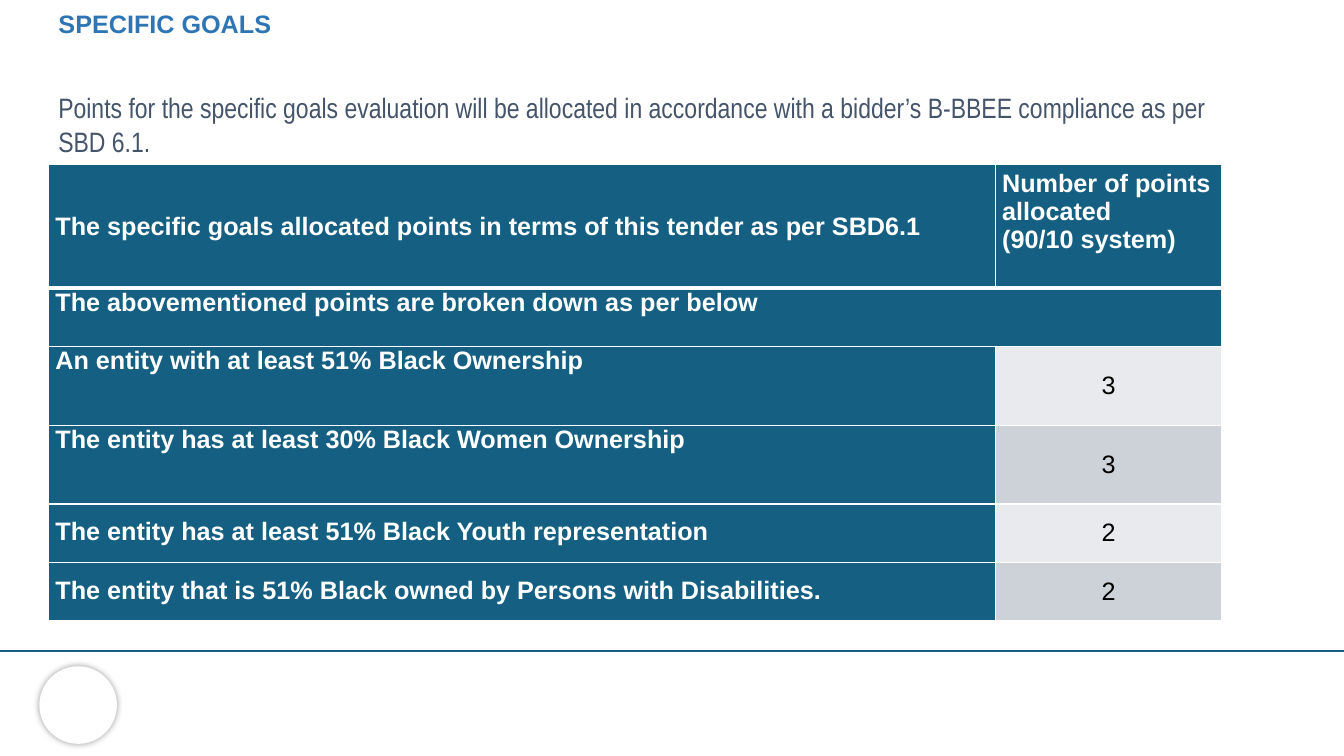
from lxml.etree import SubElement
from pptx import Presentation
from pptx.dml.color import RGBColor
from pptx.enum.shapes import MSO_CONNECTOR, MSO_SHAPE
from pptx.enum.text import MSO_ANCHOR as Anchor, MSO_AUTO_SIZE, PP_ALIGN as Align
from pptx.oxml import parse_xml
from pptx.oxml.ns import nsdecls, qn
from pptx.util import Inches, Pt

COLORS = {
    "teal": "156082", "white": "FFFFFF", "heading": "2E75B6", "body": "44546A",
    "black": "000000", "light": "E8EAED", "dark": "CCD2D8",
}
LABEL = {"size": Pt(18), "name": "Arial", "bold": True}
POINTS = {"size": Pt(18), "name": "Arial", "bold": False}
HEADERS = [
    ["The specific goals allocated points in terms of this tender as per SBD6.1"],
    ["Number of points", "allocated", "(90/10 system)"],
]
BREAKDOWN = "The abovementioned points are broken down as per below"
GOALS = [
    ("An entity with at least 51% Black Ownership", "3", 1),
    ("The entity has at least 30% Black Women Ownership", "3", 1),
    ("The entity has at least 51% Black Youth representation", "2", 1.5),
    ("The entity that is 51% Black owned by Persons with Disabilities.", "2", 1.5),
]
COLUMN_WIDTHS = [9.39, 2.25]
ROW_HEIGHTS = [1.23, 0.58, 0.78, 0.78, 0.58, 0.58]


def rgb(name):
    """Return the named colour."""
    return RGBColor.from_string(COLORS[name])


def write(frame, lines, font, color, align=Align.LEFT, spacing=None):
    """Write one formatted paragraph for each line."""
    frame.text = "\n".join(lines)
    for paragraph in frame.paragraphs:
        paragraph.alignment = align
        paragraph.line_spacing = spacing
        for attribute, value in font.items():
            setattr(paragraph.font, attribute, value)
        paragraph.font.color.rgb = rgb(color)


def add_footer(slide):
    """Draw the footer rule and the shadowed disc."""
    rule = slide.shapes.add_connector(
        MSO_CONNECTOR.STRAIGHT, Inches(13.33), Inches(6.46), 0, Inches(6.46))
    rule.line.color.rgb = rgb("teal")
    rule.line.width = Pt(1.5)
    SubElement(rule._element.spPr, qn("a:effectLst"))
    disc = slide.shapes.add_shape(
        MSO_SHAPE.OVAL, Inches(0.39), Inches(6.61), Inches(0.77), Inches(0.77))
    disc.fill.solid()
    disc.fill.fore_color.rgb = rgb("white")
    disc.line.fill.background()
    disc.shadow.inherit = False
    disc._element.spPr.find(qn("a:effectLst")).append(parse_xml(
        f'<a:outerShdw {nsdecls("a")} blurRad="{Pt(5)}" dist="0" dir="0" algn="ctr" '
        f'rotWithShape="0"><a:srgbClr val="{COLORS["black"]}"><a:alpha val="40000"/>'
        '</a:srgbClr></a:outerShdw>'))


def set_title(slide, text):
    """Place and format the title placeholder."""
    title = slide.shapes.title
    title.left, title.top = Inches(0.48), Inches(0.07)
    title.width, title.height = Inches(11.94), Inches(0.78)
    title.text_frame.vertical_anchor = Anchor.TOP
    title.text_frame.auto_size = MSO_AUTO_SIZE.NONE
    write(title.text_frame, [text], LABEL, "heading", spacing=0.9)


def add_intro(slide, text):
    """Add the sentence above the table."""
    intro = slide.shapes.add_textbox(
        Inches(0.48), Inches(0.85), Inches(11.74), Inches(1.11))
    intro.text_frame.word_wrap = True
    write(intro.text_frame, [text], {"size": Pt(20), "name": "Arial Narrow"}, "body")


def set_borders(cell, top=1, bottom=1):
    """Give a cell white borders of the stated weights."""
    properties = cell._tc.get_or_add_tcPr()
    weights = {"lnL": 1, "lnR": 1, "lnT": top, "lnB": bottom}
    for index, (side, weight) in enumerate(weights.items()):
        properties.insert(index, parse_xml(
            f'<a:{side} {nsdecls("a")} w="{Pt(weight)}"><a:solidFill>'
            f'<a:srgbClr val="{COLORS["white"]}"/></a:solidFill></a:{side}>'))


def fill_cell(cell, lines, fill="teal", font=LABEL, color="white", anchor=Anchor.TOP,
              align=Align.LEFT, spacing=None, inset=0):
    """Fill a table cell and write its text."""
    cell.fill.solid()
    cell.fill.fore_color.rgb = rgb(fill)
    cell.margin_left = cell.margin_right = Inches(0.07)
    cell.margin_top, cell.margin_bottom = Inches(inset), 0
    cell.vertical_anchor = anchor
    write(cell.text_frame, lines, font, color, align, spacing)


def add_goals_table(slide):
    """Add the table of goals and their points."""
    table = slide.shapes.add_table(
        len(ROW_HEIGHTS), len(COLUMN_WIDTHS), Inches(0.48), Inches(1.63),
        Inches(sum(COLUMN_WIDTHS)), Inches(sum(ROW_HEIGHTS))).table
    for column, width in zip(table.columns, COLUMN_WIDTHS):
        column.width = Inches(width)
    for row, height in zip(table.rows, ROW_HEIGHTS):
        row.height = Inches(height)
    goal_header, points_header = table.rows[0].cells
    fill_cell(goal_header, HEADERS[0], anchor=Anchor.MIDDLE, align=Align.JUSTIFY)
    fill_cell(points_header, HEADERS[1], align=Align.JUSTIFY, inset=0.05)
    table.cell(1, 0).merge(table.cell(1, 1))
    fill_cell(table.cell(1, 0), [BREAKDOWN])
    for index, (goal, points, spacing) in enumerate(GOALS):
        goal_cell, points_cell = table.rows[index + 2].cells
        fill_cell(goal_cell, [goal], spacing=spacing)
        fill_cell(points_cell, [points], ("light", "dark")[index % 2], POINTS, "black",
                  Anchor.MIDDLE, Align.CENTER)
    for index, row in enumerate(table.rows):
        for cell in row.cells:
            set_borders(cell, 3 if index == 1 else 1, 3 if index == 0 else 1)


def main():
    """Build and save the slide."""
    deck = Presentation()
    deck.slide_width, deck.slide_height = Inches(13.33), Inches(7.5)
    slide = deck.slides.add_slide(deck.slide_layouts[5])
    add_footer(slide)
    set_title(slide, "SPECIFIC GOALS")
    add_intro(slide, "Points for the specific goals evaluation will be allocated in "
                     "accordance with a bidder’s B-BBEE compliance as per SBD 6.1.")
    add_goals_table(slide)
    deck.save("out.pptx")


if __name__ == "__main__":
    main()
